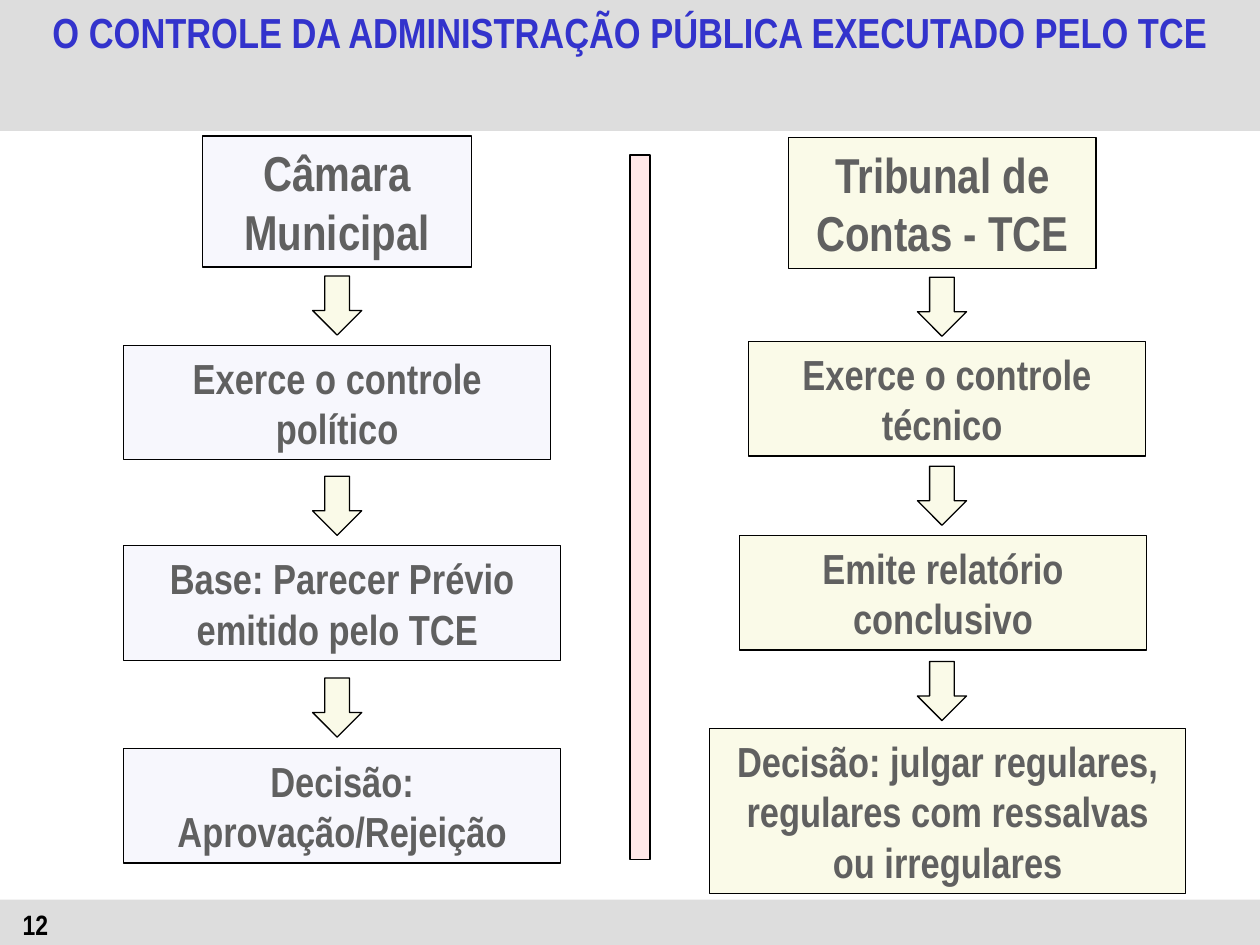
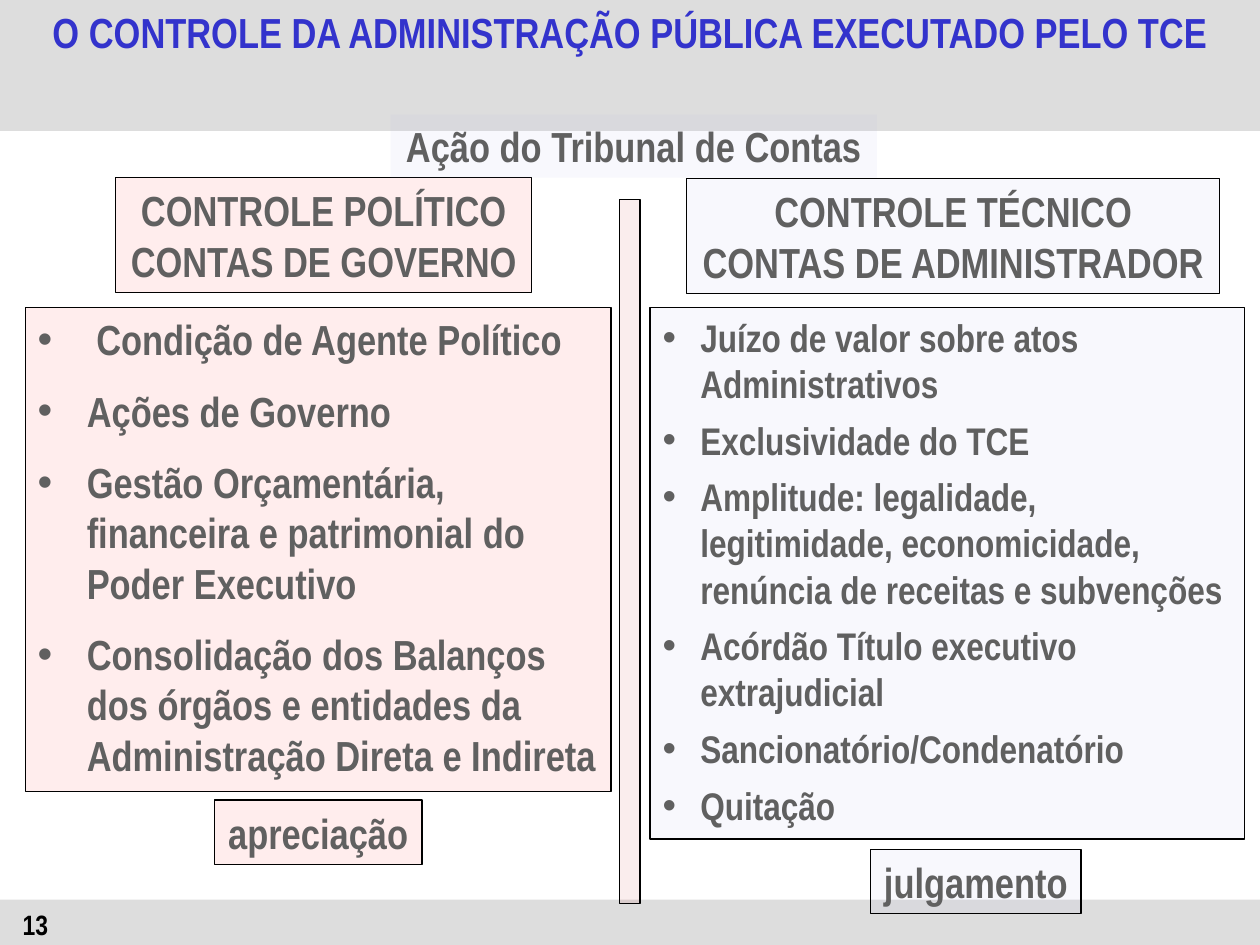
import pptx
import pptx.dml.color
import pptx.enum.shapes
import pptx.enum.text
import pptx.oxml.ns
import pptx.util
from lxml import etree

Pt = pptx.util.Pt
RGBColor = pptx.dml.color.RGBColor
SHAPE = pptx.enum.shapes.MSO_SHAPE
ALIGN = pptx.enum.text.PP_ALIGN
ANCHOR = pptx.enum.text.MSO_ANCHOR
qn = pptx.oxml.ns.qn

BAND = RGBColor(0xDD, 0xDD, 0xDD)
TITLE = RGBColor(0x33, 0x33, 0xCC)
TEXT = RGBColor(0x60, 0x60, 0x60)
BLACK = RGBColor(0, 0, 0)
LILAC = RGBColor(0xAD, 0xAD, 0xEB)
PERIWINKLE = RGBColor(0xA5, 0xA5, 0xE9)
OLIVE = RGBColor(0xCC, 0xCC, 0x00)
RED = RGBColor(0xFF, 0, 0)
DARK_RED = RGBColor(0xC0, 0, 0)

FONT = "Arial Narrow"
WIDTH, HEIGHT = 720, 540
HEADING = "O CONTROLE DA ADMINISTRAÇÃO PÚBLICA EXECUTADO PELO TCE"


class Deck:
    def __init__(self):
        self.prs = pptx.Presentation()
        self.prs.slide_width, self.prs.slide_height = Pt(WIDTH), Pt(HEIGHT)
        self.s = None
        self.alpha = 100

    def slide(self, number, alpha):
        """Start a slide with its bands, title and number."""
        self.s = self.prs.slides.add_slide(self.prs.slide_layouts[6])
        self.alpha = 100
        self.shape((0, 514.1, WIDTH, 25.9), BAND, line=False)
        self.shape((0, 0, WIDTH, 74.9), BAND, line=False)
        r = self.label((0, 0, WIDTH, 65.5), HEADING, 24, TITLE, ALIGN.CENTER)
        self.text_shadow(r)
        self.label((5.8, 514.8, 149.8, 36), str(number), 16, BLACK, ALIGN.LEFT)
        self.alpha = alpha

    def shape(self, at, color, kind=SHAPE.RECTANGLE, line=True):
        sp = self.s.shapes.add_shape(kind, *map(Pt, at))
        sp.shadow.inherit = False
        sp.fill.solid()
        sp.fill.fore_color.rgb = color
        if self.alpha < 100:
            clr = sp.fill._xPr.find(qn("a:solidFill"))[0]
            etree.SubElement(clr, qn("a:alpha"), val=str(self.alpha * 1000))
        if line:
            sp.line.color.rgb = BLACK
            sp.line.width = Pt(0.75)
        else:
            sp.line.fill.background()
        return sp

    def arrow(self, left, top):
        self.shape((left, top, 28.1, 33.8), OLIVE, SHAPE.DOWN_ARROW)

    def box(self, at, color, *lines, size=24, wrap=True, line=True):
        tf = self.shape(at, color, line=line).text_frame
        tf.word_wrap = wrap
        tf.vertical_anchor = ANCHOR.MIDDLE
        for p, text in self.paragraphs(tf, lines):
            p.alignment = ALIGN.CENTER
            self.run(p, text, size, TEXT)

    def bullets(self, at, color, items, size, indent, after):
        tf = self.shape(at, color).text_frame
        tf.word_wrap = True
        tf.vertical_anchor = ANCHOR.TOP
        for p, text in self.paragraphs(tf, items):
            p.alignment = ALIGN.LEFT
            p.space_after = Pt(after)
            pPr = p._p.get_or_add_pPr()
            pPr.set("marL", str(Pt(indent)))
            pPr.set("indent", str(-Pt(indent)))
            etree.SubElement(pPr, qn("a:buFont"), typeface="Arial")
            etree.SubElement(pPr, qn("a:buChar"), char="•")
            self.run(p, text, size, TEXT)

    def label(self, at, text, size, color, align):
        tf = self.s.shapes.add_textbox(*map(Pt, at)).text_frame
        tf.word_wrap = True
        p = tf.paragraphs[0]
        p.alignment = align
        return self.run(p, text, size, color)

    def paragraphs(self, tf, texts):
        for i, text in enumerate(texts):
            yield (tf.add_paragraph() if i else tf.paragraphs[0]), text

    def run(self, p, text, size, color):
        r = p.add_run()
        r.text = text
        r.font.name = FONT
        r.font.size = Pt(size)
        r.font.bold = True
        r.font.color.rgb = color
        return r

    def text_shadow(self, r):
        effects = etree.Element(qn("a:effectLst"))
        shadow = etree.SubElement(effects, qn("a:outerShdw"), dist=str(Pt(2)),
                                  dir="2700000", algn="tl")
        etree.SubElement(shadow, qn("a:srgbClr"), val="808080")
        r.font._element.find(qn("a:solidFill")).addnext(effects)


def control_flow(deck):
    deck.slide(12, alpha=9)
    deck.shape((360, 88.6, 11.5, 402.5), RED)

    # Each column: colour, arrow left, arrow tops, boxes (place, text, size)
    columns = [
        (LILAC, 178.6, (157.7, 272.2, 387.4), [
            ((115.9, 77.8, 153.4, 74.9), "Câmara Municipal", 28),
            ((70.6, 197.3, 244.1, 65.5), "Exerce o controle político", 24),
            ((70.6, 311.8, 249.8, 65.5),
             "Base: Parecer Prévio emitido pelo TCE ", 24),
            ((70.6, 427.7, 249.8, 65.5), "Decisão: Aprovação/Rejeição", 24),
        ]),
        (OLIVE, 524.2, (158.4, 266.4, 378), [
            ((450.7, 78.5, 175.7, 74.9), "Tribunal de Contas - TCE", 28),
            ((427.7, 195.1, 226.8, 65.5), "Exerce o controle técnico ", 24),
            ((422.6, 306, 232.6, 65.5), "Emite relatório conclusivo", 24),
            ((405.4, 416.2, 272.2, 94.3),
             "Decisão: julgar regulares, regulares com ressalvas "
             "ou irregulares", 24),
        ]),
    ]
    for color, arrow_left, arrow_tops, boxes in columns:
        for at, text, size in boxes:
            deck.box(at, color, text, size=size)
        for top in arrow_tops:
            deck.arrow(arrow_left, top)


def court_action(deck):
    deck.slide(13, alpha=7)
    deck.shape((354.2, 113.8, 11.5, 402.5), DARK_RED)

    # Political control
    deck.box((66.2, 101.5, 237.6, 65.5), RED,
             "CONTROLE POLÍTICO", "CONTAS DE GOVERNO", wrap=False)
    deck.bullets((14.4, 175.7, 334.8, 276.5), RED, [
        " Condição de Agente Político",
        "Ações de Governo",
        "Gestão Orçamentária, financeira e patrimonial do Poder Executivo",
        "Consolidação dos Balanços dos órgãos e entidades da "
        "Administração Direta e Indireta",
    ], size=24, indent=28.1, after=12)
    deck.box((122.4, 457.2, 118.8, 36.7), RED, "apreciação", wrap=False)

    # Technical control
    deck.box((392.4, 102.2, 304.6, 65.5), PERIWINKLE,
             "CONTROLE TÉCNICO", "CONTAS DE ADMINISTRADOR", wrap=False)
    deck.bullets((371.5, 175.7, 339.8, 303.8), PERIWINKLE, [
        "Juízo de valor sobre atos Administrativos",
        "Exclusividade do TCE",
        "Amplitude: legalidade, legitimidade, economicidade, "
        "renúncia de receitas e subvenções",
        "Acórdão Título executivo extrajudicial",
        "Sancionatório/Condenatório",
        "Quitação",
    ], size=22, indent=21.6, after=6)
    deck.box((497.5, 485.3, 120.2, 36.7), PERIWINKLE, "julgamento", wrap=False)

    # Subtitle
    deck.box((223.2, 65.5, 277.9, 36), PERIWINKLE,
             "Ação do Tribunal de Contas", wrap=False, line=False)


def main():
    deck = Deck()
    control_flow(deck)
    court_action(deck)
    deck.prs.save("out.pptx")


if __name__ == "__main__":
    main()
